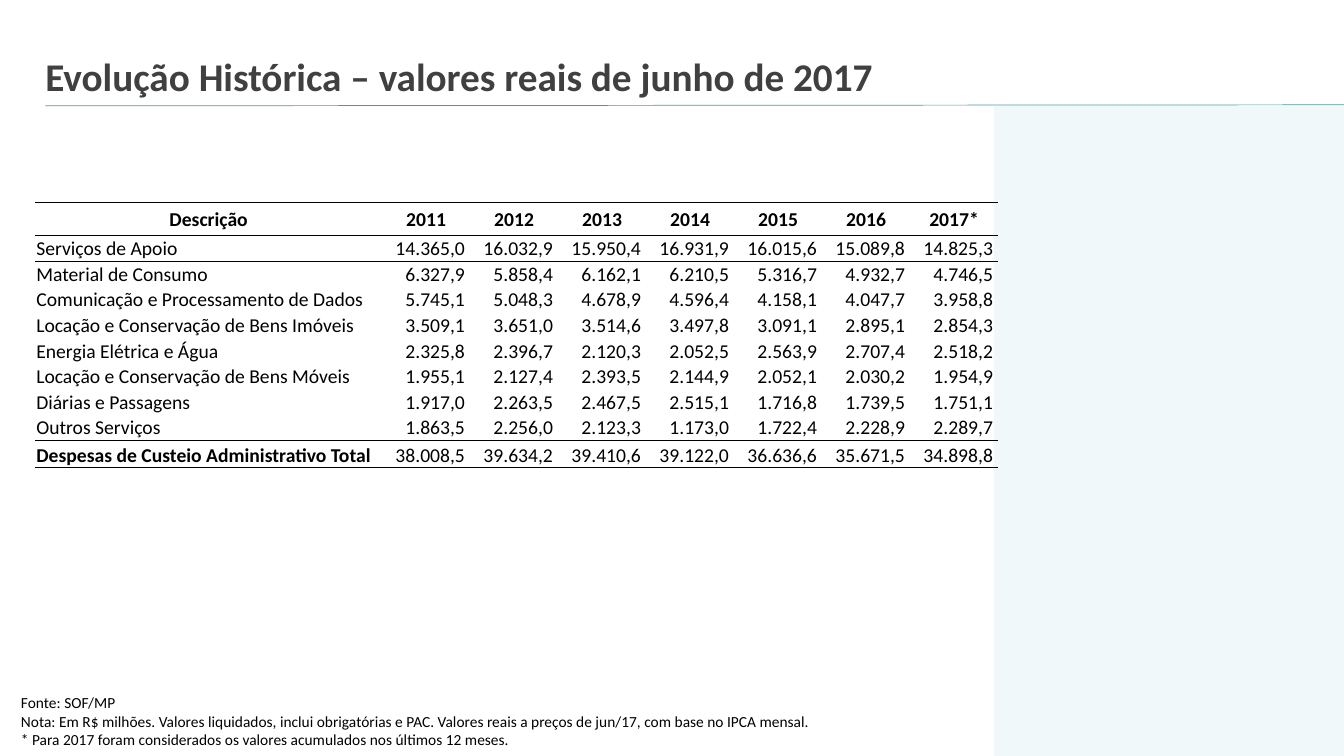
from dataclasses import dataclass

from lxml import etree
from pptx import Presentation, util as u
from pptx.dml.color import RGBColor
from pptx.enum import shapes, text
from pptx.oxml import ns

TITLE = "Evolução Histórica – valores reais de junho de 2017"
HEADER = "Descrição", "2011", "2012", "2013", "2014", "2015", "2016", "2017*"
EXPENSES = [
    ("Serviços de Apoio", "14.365,0", "16.032,9", "15.950,4", "16.931,9", "16.015,6", "15.089,8", "14.825,3"),
    ("Material de Consumo", "6.327,9", "5.858,4", "6.162,1", "6.210,5", "5.316,7", "4.932,7", "4.746,5"),
    ("Comunicação e Processamento de Dados", "5.745,1", "5.048,3", "4.678,9", "4.596,4", "4.158,1", "4.047,7", "3.958,8"),
    ("Locação e Conservação de Bens Imóveis", "3.509,1", "3.651,0", "3.514,6", "3.497,8", "3.091,1", "2.895,1", "2.854,3"),
    ("Energia Elétrica e Água", "2.325,8", "2.396,7", "2.120,3", "2.052,5", "2.563,9", "2.707,4", "2.518,2"),
    ("Locação e Conservação de Bens Móveis", "1.955,1", "2.127,4", "2.393,5", "2.144,9", "2.052,1", "2.030,2", "1.954,9"),
    ("Diárias e Passagens", "1.917,0", "2.263,5", "2.467,5", "2.515,1", "1.716,8", "1.739,5", "1.751,1"),
    ("Outros Serviços", "1.863,5", "2.256,0", "2.123,3", "1.173,0", "1.722,4", "2.228,9", "2.289,7"),
]
TOTAL = ("Despesas de Custeio Administrativo Total", "38.008,5", "39.634,2", "39.410,6", "39.122,0",
         "36.636,6", "35.671,5", "34.898,8")
NOTES = [
    "Fonte: SOF/MP",
    "Nota: Em R$ milhões. Valores liquidados, inclui obrigatórias e PAC. "
    "Valores reais a preços de jun/17, com base no IPCA mensal.",
    "* Para 2017 foram considerados os valores acumulados nos últimos 12 meses.",
]


@dataclass(frozen=True)
class Theme:
    font: str = "Calibri"
    heading: str = "404040"
    ink: str = "000000"
    panel: str = "F1F8F9"
    rule: str = "4A999F"
    title_size: int = 28
    table_size: int = 14
    note_size: int = 11


THEME = Theme()
WIDTH, HEIGHT = 13.33, 7.5
PANEL_LEFT, PANEL_TOP = 9.87, 1.06
TABLE_LEFT, TABLE_TOP, TABLE_WIDTH, TABLE_HEIGHT = 0.35, 2.01, 9.55, 2.63
LABEL_WIDTH, HEADER_HEIGHT, TOTAL_HEIGHT = 3.44, 0.33, 0.27
TABLE_STYLE = "{2D5ABB26-0587-4C30-8999-92F81FD0307C}"


def inches(*lengths):
    return [u.Inches(length) for length in lengths]


def style(paragraph, size, color=THEME.ink, bold=False):
    font = paragraph.font
    font.name, font.size, font.bold = THEME.font, u.Pt(size), bold
    font.color.rgb = RGBColor.from_string(color)


def add_border(cell, side, points):
    border = etree.Element(ns.qn(f"a:ln{side}"), w=str(u.Pt(points)))
    fill = etree.SubElement(border, ns.qn("a:solidFill"))
    etree.SubElement(fill, ns.qn("a:srgbClr"), val=THEME.ink)
    cell._tc.get_or_add_tcPr().insert(0, border)


def add_frame(slide):
    panel = slide.shapes.add_shape(
        shapes.MSO_SHAPE.RECTANGLE, *inches(PANEL_LEFT, PANEL_TOP, WIDTH - PANEL_LEFT, HEIGHT - PANEL_TOP))
    panel.shadow.inherit = False
    panel.fill.solid()
    panel.fill.fore_color.rgb = panel.line.color.rgb = RGBColor.from_string(THEME.panel)
    panel.line.width = u.Pt(1)
    rule = slide.shapes.add_connector(shapes.MSO_CONNECTOR.STRAIGHT, *inches(0.45, 1.05, WIDTH, 1.04))
    rule.line.color.rgb = RGBColor.from_string(THEME.rule)
    rule.line.width = u.Pt(0.5)
    etree.SubElement(rule._element.spPr, ns.qn("a:effectLst"))


def add_title(slide):
    title = slide.shapes.title
    title.left, title.top, title.width, title.height = inches(0.35, 0.09, 9.57, 0.95)
    title.text_frame.text = TITLE
    title.text_frame.vertical_anchor = text.MSO_ANCHOR.BOTTOM
    heading = title.text_frame.paragraphs[0]
    heading.alignment, heading.line_spacing = text.PP_ALIGN.LEFT, 0.9
    style(heading, THEME.title_size, THEME.heading, True)


def add_notes(slide):
    frame = slide.shapes.add_textbox(*inches(0.11, 6.83, 8.26, 0.66)).text_frame
    frame.word_wrap = True
    frame.text = "\n".join(NOTES)
    for note in frame.paragraphs:
        style(note, THEME.note_size)


def add_expenses(slide):
    rows = [HEADER, *EXPENSES, TOTAL]
    last = len(rows) - 1
    table = slide.shapes.add_table(
        len(rows), len(HEADER), *inches(TABLE_LEFT, TABLE_TOP, TABLE_WIDTH, TABLE_HEIGHT)).table
    table.first_row = table.horz_banding = False
    table._tbl.tblPr[0].text = TABLE_STYLE
    year_width = (TABLE_WIDTH - LABEL_WIDTH) / (len(HEADER) - 1)
    body_height = (TABLE_HEIGHT - HEADER_HEIGHT - TOTAL_HEIGHT) / len(EXPENSES)
    for c, column in enumerate(table.columns):
        column.width = u.Inches(year_width if c else LABEL_WIDTH)
    for r, row in enumerate(table.rows):
        row.height = u.Inches({0: HEADER_HEIGHT, last: TOTAL_HEIGHT}.get(r, body_height))
    borders = {0: (("B", 1), ("T", 0.5)), 1: (("T", 1),),
               last - 1: (("B", 0.5),), last: (("B", 1), ("T", 0.5))}
    for r, values in enumerate(rows):
        for c, value in enumerate(values):
            cell = table.cell(r, c)
            cell.text = value
            cell.fill.background()
            cell.margin_left = cell.margin_top = u.Inches(0.01)
            cell.margin_right = u.Inches(0.05 if r and c else 0.01)
            cell.margin_bottom = 0
            cell.vertical_anchor = text.MSO_ANCHOR.BOTTOM if r == last else text.MSO_ANCHOR.MIDDLE
            entry = cell.text_frame.paragraphs[0]
            aligned = text.PP_ALIGN.RIGHT if c else text.PP_ALIGN.LEFT
            entry.alignment = aligned if r else text.PP_ALIGN.CENTER
            style(entry, THEME.table_size, bold=r == 0 or (r == last and c == 0))
            for side, points in borders.get(r, ()):
                add_border(cell, side, points)


def main():
    deck = Presentation()
    deck.slide_width, deck.slide_height = inches(WIDTH, HEIGHT)
    slide = deck.slides.add_slide(deck.slide_layouts[5])
    add_frame(slide)
    add_title(slide)
    add_notes(slide)
    add_expenses(slide)
    deck.save("out.pptx")


if __name__ == "__main__":
    main()
